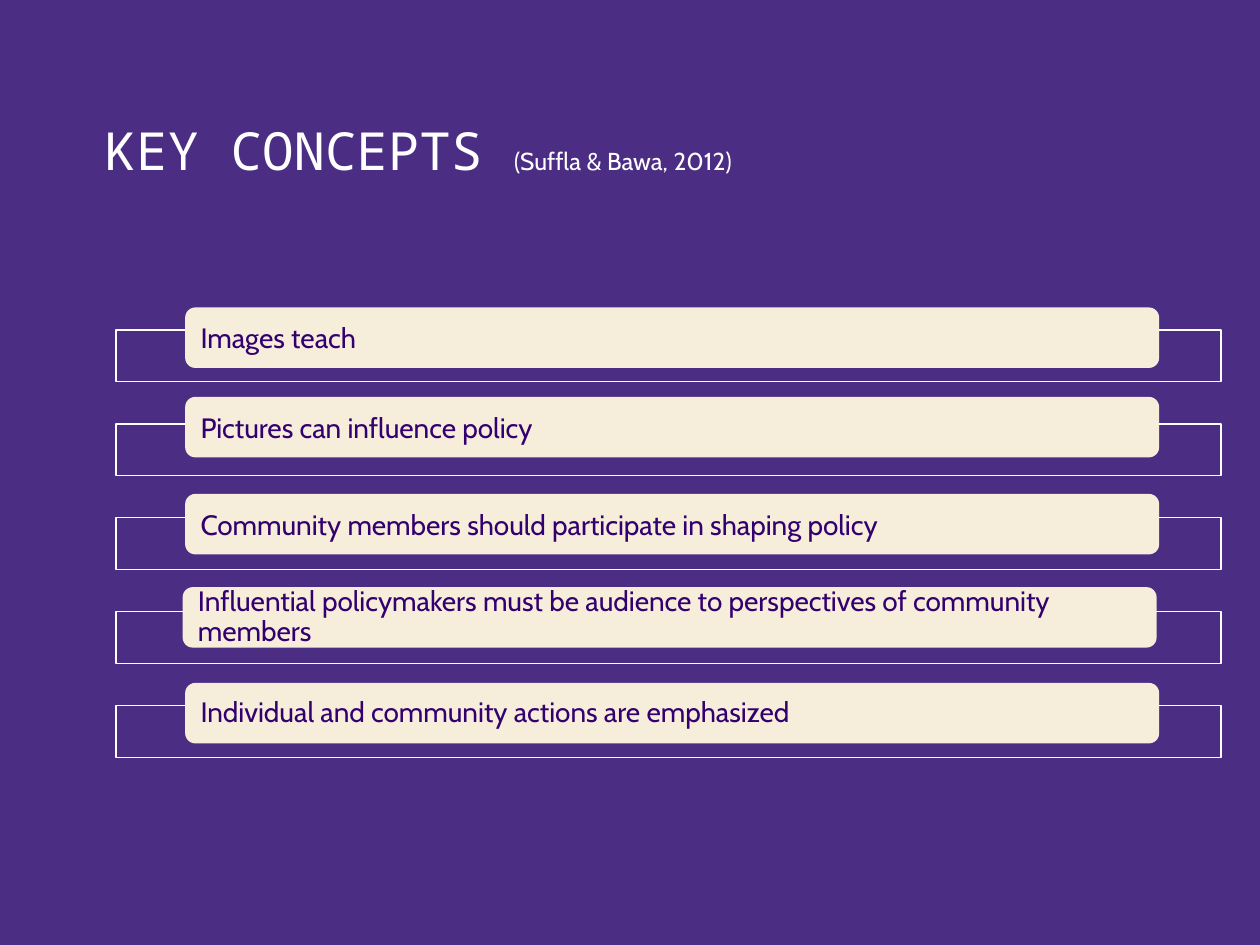
from pptx import Presentation
from pptx.dml.color import RGBColor
from pptx.enum.shapes import MSO_SHAPE
from pptx.enum.text import MSO_ANCHOR, MSO_AUTO_SIZE, PP_ALIGN
from pptx.util import Inches, Pt

RECT, ROUNDED = MSO_SHAPE.RECTANGLE, MSO_SHAPE.ROUNDED_RECTANGLE
LEFT = PP_ALIGN.LEFT
BOTTOM, MIDDLE = MSO_ANCHOR.BOTTOM, MSO_ANCHOR.MIDDLE
TITLE_ONLY = 5

PURPLE, WHITE, CREAM, INK = "4B2E83", "FFFFFF", "F6EDDA", "33006F"
HEADING_FONT, TEXT_FONT = "Noto Sans Mono", "Cabin"

HEADING = "KEY CONCEPTS "
CITATION = "(Suffla & Bawa, 2012)"
# text, label left, label top, line spacing
CONCEPTS = [
    ("Images teach", 1.47, 2.44, 1.0),
    ("Pictures can influence policy", 1.47, 3.15, 1.0),
    ("Community members should participate in shaping policy", 1.47, 3.92, 1.0),
    ("Influential policymakers must be audience to perspectives of community members",
     1.45, 4.66, 0.9),
    ("Individual and community actions are emphasized", 1.47, 5.42, 0.9),
]
FRAME_LEFT, FRAME_TOP, FRAME_WIDTH, FRAME_HEIGHT = 0.92, 2.62, 8.77, 0.41
FRAME_STEP = 0.745
LABEL_WIDTH, LABEL_HEIGHT = 7.73, 0.48


def color(value):
    return RGBColor.from_string(value)


def add_text(paragraph, text, size, font=TEXT_FONT, fill=WHITE, spacing=1.0):
    paragraph.alignment = LEFT
    paragraph.line_spacing = spacing
    run = paragraph.add_run()
    run.text = text
    run.font.size = Pt(size)
    run.font.name = font
    run.font.color.rgb = color(fill)


def add_box(slide, kind, left, top, width, height):
    box = slide.shapes.add_shape(
        kind, Inches(left), Inches(top), Inches(width), Inches(height))
    box.shadow.inherit = False
    return box


def add_frame(slide, top):
    frame = add_box(slide, RECT, FRAME_LEFT, top, FRAME_WIDTH, FRAME_HEIGHT)
    frame.fill.background()
    frame.line.color.rgb = color(WHITE)
    frame.line.width = Pt(0.75)


def add_label(slide, text, left, top, spacing):
    label = add_box(slide, ROUNDED, left, top, LABEL_WIDTH, LABEL_HEIGHT)
    label.adjustments[0] = 0.167
    label.fill.solid()
    label.fill.fore_color.rgb = color(CREAM)
    label.line.fill.background()
    frame = label.text_frame
    frame.word_wrap = True
    frame.vertical_anchor = MIDDLE
    frame.margin_left = frame.margin_right = Inches(0.1)
    frame.margin_top = frame.margin_bottom = Inches(0.1)
    add_text(frame.paragraphs[0], text, 16, fill=INK, spacing=spacing)


def add_title(slide):
    title = slide.shapes.title
    title.left, title.top = Inches(0.73), Inches(0.41)
    title.width, title.height = Inches(8.95), Inches(1.08)
    frame = title.text_frame
    frame.auto_size = MSO_AUTO_SIZE.NONE
    frame.word_wrap = True
    frame.vertical_anchor = BOTTOM
    heading = frame.paragraphs[0]
    add_text(heading, HEADING, 30, font=HEADING_FONT, spacing=0.9)
    add_text(heading, CITATION, 14, spacing=0.9)


def main():
    deck = Presentation()
    deck.slide_width, deck.slide_height = Inches(10), Inches(7.5)
    slide = deck.slides.add_slide(deck.slide_layouts[TITLE_ONLY])
    slide.background.fill.solid()
    slide.background.fill.fore_color.rgb = color(PURPLE)
    add_title(slide)
    for row in range(len(CONCEPTS)):
        add_frame(slide, FRAME_TOP + row * FRAME_STEP)
    for text, left, top, spacing in CONCEPTS:
        add_label(slide, text, left, top, spacing)
    deck.save("out.pptx")


if __name__ == "__main__":
    main()
